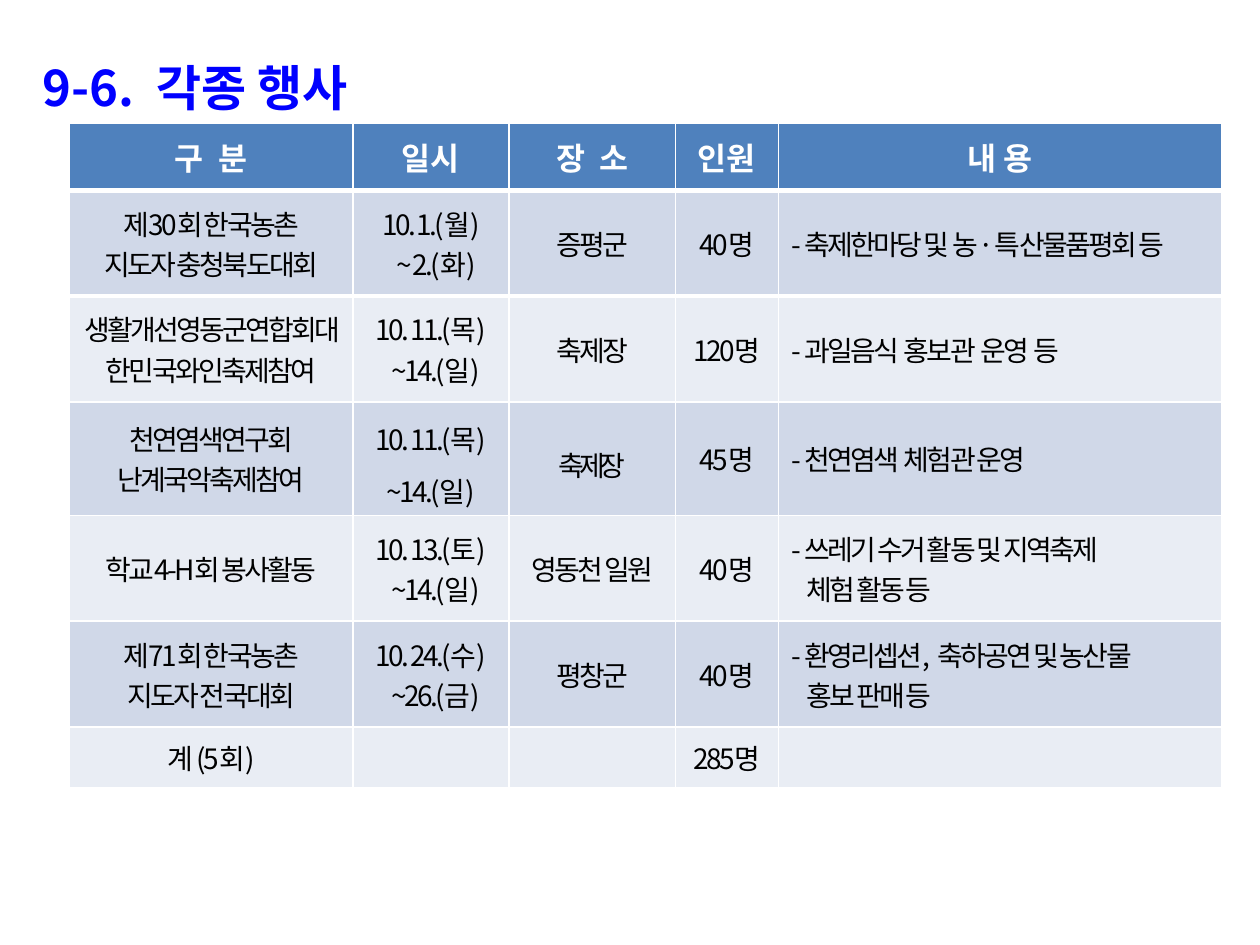
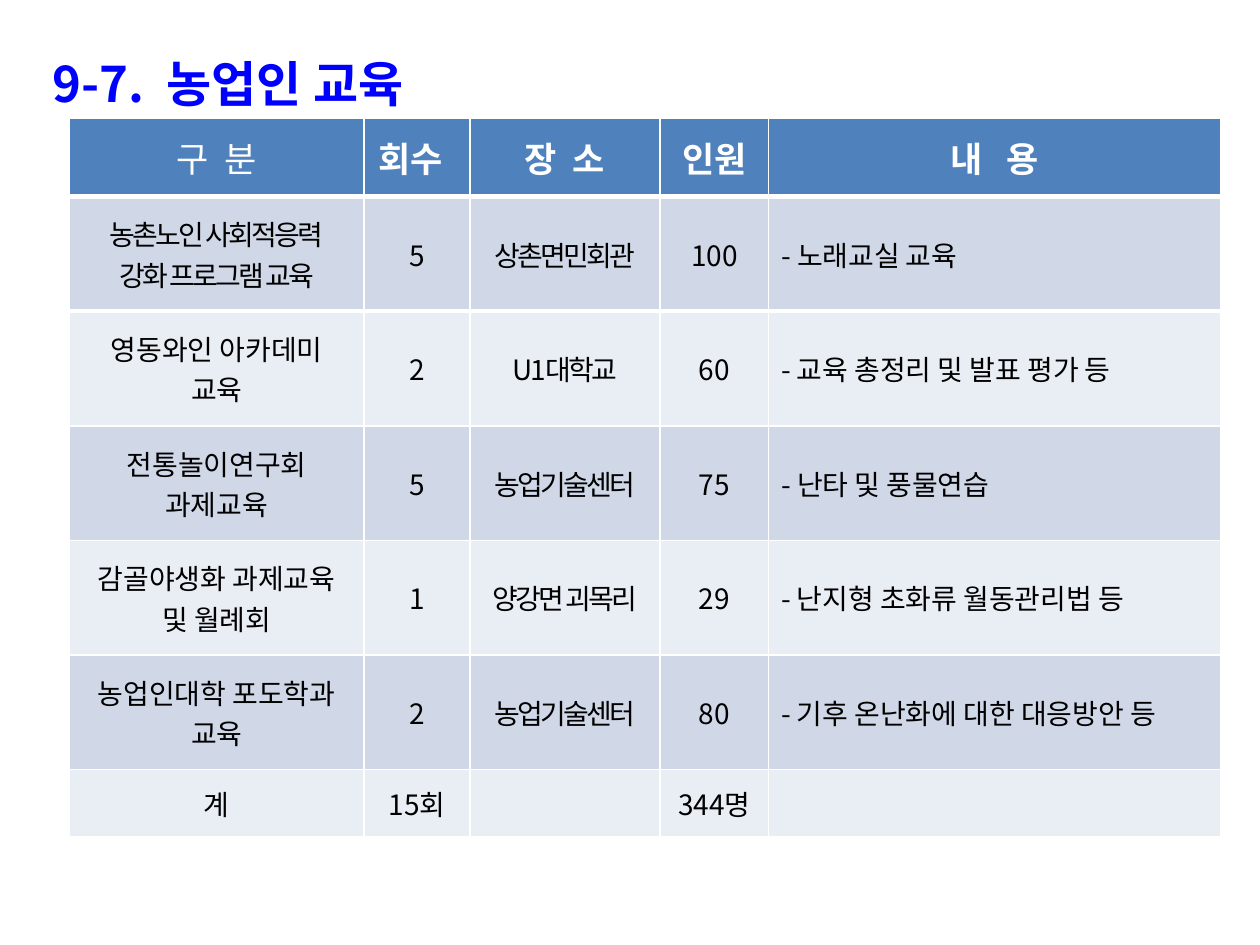
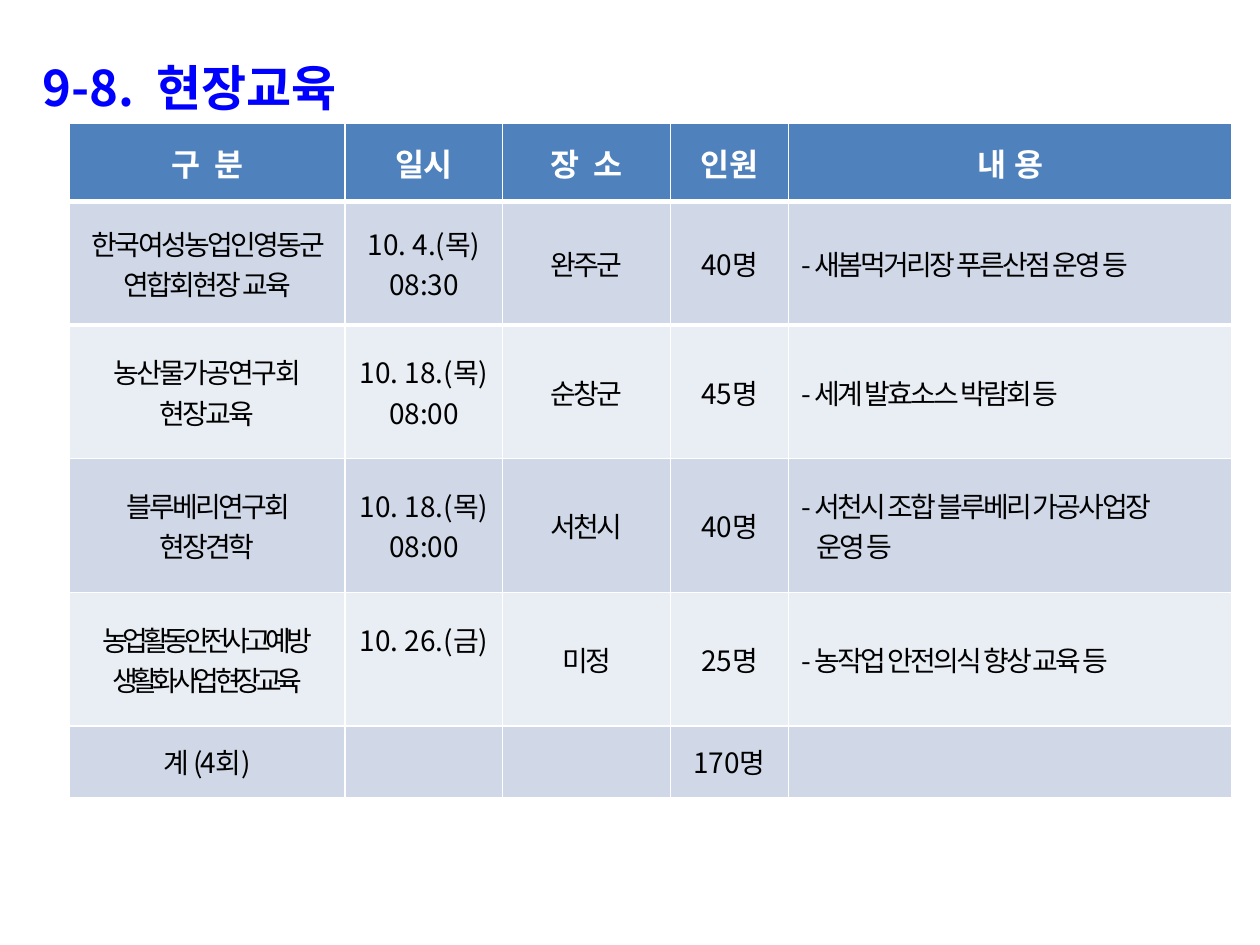
from lxml import etree
from pptx import Presentation
from pptx import util as u
from pptx.dml.color import RGBColor
from pptx.enum import text
from pptx.oxml.ns import qn

FONT = "Noto Sans CJK KR"
COLORS = {
    "title": "0000FF",
    "header": "4F81BD",
    "header_text": "FFFFFF",
    "header_rule": "FFFFFF",
    "odd_row": "D0D8E8",
    "even_row": "E9EDF4",
    "body_text": "000000",
}
BODY_SIZE = 16
HANG = 0.38

# Cell text: a line break starts a paragraph, |bars| enclose tighter letters,
# and a leading space marks a line with a dash bullet.
sections = [
    {
        "title": "9-6.  각종 행사", "title_box": (0.24, 0.31, 9.45, 0.65),
        "top": 0.98, "header_size": 18,
        "columns": [2.25, 1.24, 1.32, 0.82, 3.52],
        "heights": [0.53, 0.84, 0.84, 0.9, 0.84, 0.84, 0.48],
        "spacing": [-1.5] * 5, "tight": -3,
        "rows": [
            ["구  분", "일시", "장  소", "인원", "내 용"],
            ["제30회 한국농촌\n지도자 충청북도대회", "10. 1.(월)\n~ 2.(화)", "증평군", "40명",
             "- 축제한마당 및 |농·특|산물품평회 등"],
            ["생활개선영동군연합회대한민국와인축제참여", "10. 11.(목)\n~14.(일)", "축제장", "120명",
             "- 과일음식  홍보관  운영  등"],
            ["천연염색연구회\n난계국악축제참여", "10. 11.(목)\n~14.(일)", "|축제장|", "45명",
             "- 천연염색  체험관 운영"],
            ["학교4-H회 봉사활동", "10. 13.(토)\n~14.(일)", "영동천 일원", "40명",
             "- 쓰레기 수거 활동 및 지역축제\n체험 활동 등"],
            ["제71회 한국농촌\n지도자 전국대회", "10. 24.(수)\n~26.(금)", "평창군", "40명",
             "- 환영리셉션,  축하공연 및 농산물\n홍보 판매 등"],
            ["계 (5회)", "", "", "285명", ""],
        ],
    },
    {
        "title": "9-7.  농업인 교육", "title_box": (0.32, 0.28, 9.45, 0.57),
        "top": 0.94, "header_size": 20,
        "columns": [2.34, 0.84, 1.51, 0.86, 3.59],
        "heights": [0.62] + [0.91] * 5 + [0.53],
        "spacing": [0, 0, -1.5, 0, 0], "tight": -1.5,
        "rows": [
            ["구  분", "회수", "장  소", "인원", "내   용"],
            ["|농촌노인 사회적응력|\n|강화 프로그램 교육|", "5", "상촌면민회관", "100", "- 노래교실 교육"],
            ["영동와인 아카데미\n교육", "2", "U1대학교", "60", " 교육 총정리 및 발표 평가 등"],
            ["전통놀이연구회 과제교육", "5", "농업기술센터", "75", "- 난타 및 풍물연습"],
            ["감골야생화 과제교육\n및 월례회", "1", "양강면 괴목리", "29", " 난지형 초화류 월동관리법 등"],
            ["농업인대학 포도학과 교육", "2", "농업기술센터", "80", " 기후 온난화에 대한 대응방안 등"],
            ["계", "15회", "", "344명", ""],
        ],
    },
    {
        "title": "9-8.  현장교육", "title_box": (0.24, 0.31, 9.45, 0.65),
        "top": 0.98, "header_size": 18,
        "columns": [2.19, 1.25, 1.33, 0.94, 3.52],
        "heights": [0.62] + [0.98] * 4 + [0.57],
        "spacing": [-1.5, 0, -1.5, 0, -1.5], "tight": -3,
        "rows": [
            ["구  분", "일시", "장  소", "인원", "내 용"],
            ["한국여성농업인영동군연합회현장 교육", "10. 4.(목)\n08:30", "완주군", "40명",
             "- 새봄먹거리장 푸른산점 운영 등"],
            ["농산물가공연구회\n현장교육", "10. 18.(목)\n08:00", "순창군", "45명",
             "- 세계 발효소스 박람회 등"],
            ["블루베리연구회 현장견학", "10. 18.(목)\n08:00", "서천시", "40명",
             "- 서천시 조합 블루베리 가공사업장\n운영 등"],
            ["|농업활동안전사고예방|\n|생활화사업 현장교육|", "10. 26.(금)", "미정", "25명",
             "- 농작업 안전의식 향상 교육 등"],
            ["계 (4회)", "", "", "170명", ""],
        ],
    },
]


def style_run(run, size, color, bold=False, spacing=0):
    run.font.size = u.Pt(size)
    run.font.bold = bold
    run.font.color.rgb = RGBColor.from_string(COLORS[color])
    run.font.name = FONT
    properties = run.font._element
    properties.set("spc", str(int(spacing * 100)))
    etree.SubElement(properties, qn("a:ea")).set("typeface", FONT)


def indent(paragraph, left, first=0):
    properties = paragraph._p.get_or_add_pPr()
    properties.set("marL", str(u.Inches(left)))
    properties.set("indent", str(u.Inches(first)))
    return properties


prs = Presentation()
prs.slide_width, prs.slide_height = u.Inches(10), u.Inches(7.5)
tables = []

for section in sections:
    slide = prs.slides.add_slide(prs.slide_layouts[5])

    # Section heading
    heading = slide.shapes.title
    heading.left, heading.top, heading.width, heading.height = map(u.Inches, section["title_box"])
    frame = heading.text_frame
    frame.text = section["title"]
    frame.word_wrap = False
    frame.auto_size = text.MSO_AUTO_SIZE.NONE
    frame.vertical_anchor = text.MSO_ANCHOR.TOP
    line = frame.paragraphs[0]
    line.alignment = text.PP_ALIGN.LEFT
    line.line_spacing = 1.2
    indent(line, 0.58, -0.58)
    style_run(line.runs[0], 28, "title", bold=True)

    # Schedule table
    rows, columns, heights = section["rows"], section["columns"], section["heights"]
    schedule = slide.shapes.add_table(
        len(rows), len(columns), u.Inches(0.55), u.Inches(section["top"]),
        u.Inches(sum(columns)), u.Inches(sum(heights))).table
    tables.append(schedule)
    for column, width in zip(schedule.columns, columns):
        column.width = u.Inches(width)
    for row, height in zip(schedule.rows, heights):
        row.height = u.Inches(height)

    for r, row in enumerate(rows):
        band = "header" if r == 0 else "odd_row" if r % 2 else "even_row"
        for c, content in enumerate(row):
            cell = schedule.cell(r, c)
            cell.fill.solid()
            cell.fill.fore_color.rgb = RGBColor.from_string(COLORS[band])
            cell.vertical_anchor = text.MSO_ANCHOR.MIDDLE

            # Thick rule between the header and the first row
            if r < 2:
                rule = etree.Element(qn("a:lnB" if r == 0 else "a:lnT"), w=str(u.Pt(3)))
                paint = etree.SubElement(rule, qn("a:solidFill"))
                etree.SubElement(paint, qn("a:srgbClr")).set("val", COLORS["header_rule"])
                cell._tc.get_or_add_tcPr().insert(0, rule)

            if not content:
                continue
            is_details = r > 0 and c == 4
            is_date = r > 0 and rows[0][c] == "일시"
            cell.text_frame.text = content.replace("|", "")
            for p, (line, words) in enumerate(zip(cell.text_frame.paragraphs, content.split("\n"))):
                line.alignment = text.PP_ALIGN.LEFT if is_details else text.PP_ALIGN.CENTER
                if words.startswith(" "):
                    bulleted = indent(line, 0)
                    etree.SubElement(bulleted, qn("a:buFont")).set("typeface", FONT)
                    etree.SubElement(bulleted, qn("a:buChar")).set("char", "-")
                elif words.startswith("~"):
                    indent(line, 0.08)
                elif is_details and p > 0:
                    indent(line, 0.12)
                elif is_details or is_date:
                    indent(line, HANG, -HANG)

                # Letter spacing changes inside the bars
                line.text = ""
                for part, piece in enumerate(words.split("|")):
                    if not piece:
                        continue
                    run = line.add_run()
                    run.text = piece
                    if r == 0:
                        style_run(run, section["header_size"], "header_text", bold=True)
                    else:
                        style_run(run, BODY_SIZE, "body_text",
                                  spacing=section["tight"] if part % 2 else section["spacing"][c])

events, farmer_classes, field_classes = tables

# Looser lines for the music festival's date and place
for c in (1, 2):
    festival = events.cell(3, c)
    festival.margin_left = festival.margin_right = u.Inches(0.07)
    festival.margin_top = festival.margin_bottom = u.Inches(0.02)
    for line in festival.text_frame.paragraphs:
        line.line_spacing = 1.3
        indent(line, 0)

# Lighter first heading and a count heading set slightly to the left
farmer_classes.cell(0, 0).text_frame.paragraphs[0].runs[0].font.bold = False
count_heading = farmer_classes.cell(0, 1)
count_heading.margin_left, count_heading.margin_right = u.Inches(0.05), u.Inches(0.15)

# The safety class has no hour yet, so its date keeps room below
field_classes.cell(4, 1).margin_bottom = u.Inches(0.37)

prs.save("out.pptx")
